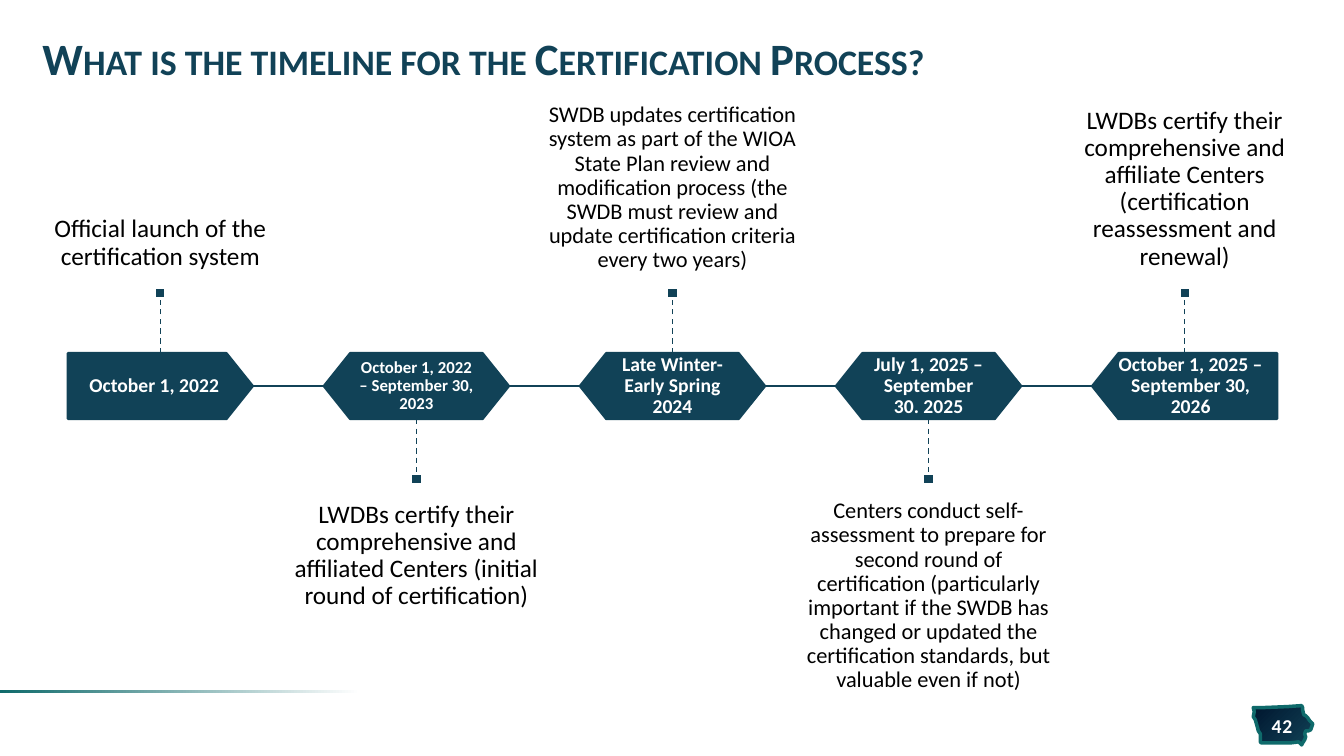
"""Build the certification process timeline slide."""
from dataclasses import dataclass

from lxml.etree import SubElement
from pptx import Presentation
from pptx.dml.color import RGBColor
from pptx.enum.dml import MSO_LINE
from pptx.enum.shapes import MSO_CONNECTOR as Connector, MSO_SHAPE as Shape
from pptx.enum.text import MSO_ANCHOR as Anchor, MSO_AUTO_SIZE as AutoSize, PP_ALIGN as Align
from pptx.oxml.ns import qn
from pptx.util import Inches, Pt

NAVY, MIDNIGHT, TEAL = "114257", "00162E", "0F6A6B"
WHITE, BLACK = "FFFFFF", "000000"
FONT = "Calibri"

PITCH = 2.54
MIDDLE_X = 6.67
AXIS_Y = 3.83
BANNER_W, BANNER_H = 1.83, 0.65
STEM = 0.54
MARKER = 0.11
NOTE_H = 1.73

STATE_OUTLINE = [
    (1291, 700), (1277, 701), (1253, 702), (1243, 702), (1244, 706), (1243, 711),
    (1245, 714), (1247, 721), (1248, 725), (1250, 728), (1250, 736), (1251, 737),
    (1280, 737), (1288, 736), (1291, 739), (1292, 737), (1294, 734), (1295, 731),
    (1294, 728), (1295, 725), (1298, 725), (1300, 724), (1302, 718), (1299, 715),
    (1297, 712), (1295, 710), (1293, 709), (1292, 704), (1292, 702),
]


@dataclass(frozen=True)
class Milestone:
    """One dated step and its explanation."""
    date: str
    note: str
    date_size: int = 14
    note_size: int = 18
    shape: Shape = Shape.HEXAGON
    rotation: int = 0
    date_shift: float = 0
    date_w: float = 1.35
    date_h: float = 0.48
    inset: float = 0.12


MILESTONES = [
    Milestone("October 1, 2022", "Official launch of the certification system",
              shape=Shape.PENTAGON, date_shift=-0.06, date_w=1.7, date_h=BANNER_H),
    Milestone("October 1, 2022 – September 30, 2023",
              "LWDBs certify their comprehensive and affiliated Centers "
              "(initial round of certification)", date_size=12, inset=0.1),
    Milestone("Late Winter-Early Spring 2024",
              "SWDB updates certification system as part of the WIOA State Plan review and "
              "modification process (the SWDB must review and update certification criteria "
              "every two years)", note_size=16),
    Milestone("July 1, 2025 – September 30. 2025",
              "Centers conduct self-assessment to prepare for second round of certification "
              "(particularly important if the SWDB has changed or updated the certification "
              "standards, but valuable even if not)", note_size=16),
    Milestone("October 1, 2025 – September 30, 2026",
              "LWDBs certify their comprehensive and affiliate Centers "
              "(certification reassessment and renewal)",
              shape=Shape.PENTAGON, rotation=180, date_shift=0.06, date_w=1.7, date_h=BANNER_H),
]


def rgb(value: str) -> RGBColor:
    """Turn a hex string into a colour."""
    return RGBColor.from_string(value)


def write_text(box, text: str, *, size: float, color: str = WHITE, bold: bool = False,
               align: Align = Align.CENTER, anchor: Anchor = Anchor.MIDDLE,
               inset_x: float = 0, inset_y: float = 0.05, line_spacing: float = 0.9,
               small_caps: bool = False, tracking: float = 0) -> None:
    """Fill a box with one formatted paragraph."""
    frame = box.text_frame
    frame.word_wrap = True
    frame.auto_size = AutoSize.NONE
    frame.vertical_anchor = anchor
    frame.margin_left = frame.margin_right = Inches(inset_x)
    frame.margin_top = frame.margin_bottom = Inches(inset_y)
    paragraph = frame.paragraphs[0]
    paragraph.alignment = align
    paragraph.line_spacing = line_spacing
    run = paragraph.add_run()
    run.text = text
    run.font.name = FONT
    run.font.size = Pt(size)
    run.font.bold = bold
    run.font.color.rgb = rgb(color)
    properties = run.font._element
    if small_caps:
        properties.set("cap", "small")
    if tracking:
        properties.set("spc", str(round(tracking * 100)))


def add_text(slide, text: str, x: float, y: float, w: float, h: float, **style) -> None:
    """Add a text box at a place in inches."""
    write_text(slide.shapes.add_textbox(Inches(x), Inches(y), Inches(w), Inches(h)), text, **style)


def add_block(slide, kind: Shape, x: float, y: float, w: float, h: float,
              fill: str = NAVY, line: str | None = None):
    """Add a flat preset shape."""
    block = slide.shapes.add_shape(kind, Inches(x), Inches(y), Inches(w), Inches(h))
    block.shadow.inherit = False
    block.fill.solid()
    block.fill.fore_color.rgb = rgb(fill)
    if line:
        block.line.color.rgb = rgb(line)
        block.line.width = Pt(2)
    else:
        block.line.fill.background()
    return block


def add_line(slide, x1: float, y1: float, x2: float, y2: float, width: float,
             dashed: bool = False) -> None:
    """Add a straight navy line without shadow."""
    line = slide.shapes.add_connector(
        Connector.STRAIGHT, Inches(x1), Inches(y1), Inches(x2), Inches(y2))
    line.line.color.rgb = rgb(NAVY)
    line.line.width = Pt(width)
    if dashed:
        line.line.dash_style = MSO_LINE.DASH
    SubElement(line._element.spPr, qn("a:effectLst"))


def fill_gradient(shape, stops: list[tuple[float, str]], angle: float) -> None:
    """Give a shape a two-colour linear gradient."""
    shape.fill.gradient()
    shape.fill.gradient_angle = angle
    for stop, (position, color) in zip(shape.fill.gradient_stops, stops):
        stop.position = position
        stop.color.rgb = rgb(color)


def add_page_mark(slide) -> None:
    """Draw the state badge, the page number and the fading rule."""
    builder = slide.shapes.build_freeform(*STATE_OUTLINE[0], scale=Inches(0.01))
    builder.add_line_segments(STATE_OUTLINE[1:], close=True)
    badge = builder.convert_to_shape()
    badge.shadow.inherit = False
    fill_gradient(badge, [(0, MIDNIGHT), (1, NAVY)], 315)
    badge.line.color.rgb = rgb(TEAL)
    badge.line.width = Pt(2.5)
    rule = add_block(slide, Shape.RECTANGLE, 0, 6.85, 3.8, 0.03)
    fill_gradient(rule, [(0.06, WHITE), (1, TEAL)], 180)
    add_text(slide, "42", 12.46, 7.08, 0.51, 0.23, size=14, bold=True,
             line_spacing=1, tracking=0.5)


def add_milestone(slide, step: Milestone, index: int) -> None:
    """Draw one banner with its date, note, stem and marker."""
    center = MIDDLE_X + PITCH * (index - len(MILESTONES) // 2)
    above = index % 2 == 0
    side = -1 if above else 1
    stem_start = AXIS_Y + side * BANNER_H / 2
    stem_end = stem_start + side * STEM
    marker_edge = stem_end + side * MARKER

    banner = add_block(slide, step.shape, center - BANNER_W / 2, AXIS_Y - BANNER_H / 2,
                       BANNER_W, BANNER_H, line=NAVY)
    banner.adjustments[0] = 0.4
    banner.rotation = step.rotation
    add_text(slide, step.date, center + step.date_shift - step.date_w / 2,
             AXIS_Y - step.date_h / 2, step.date_w, step.date_h, size=step.date_size,
             bold=True, inset_x=step.inset, inset_y=step.inset)
    add_text(slide, step.note, center - PITCH / 2, marker_edge - NOTE_H * above, PITCH, NOTE_H,
             size=step.note_size, color=BLACK, inset_y=step.note_size / 100 - 0.01,
             anchor=Anchor.BOTTOM if above else Anchor.TOP)
    if index < len(MILESTONES) - 1:
        add_line(slide, center + BANNER_W / 2, AXIS_Y, center + PITCH - BANNER_W / 2, AXIS_Y, 2)
    add_line(slide, center, stem_start, center, stem_end, 1, dashed=True)
    add_block(slide, Shape.RECTANGLE, center - MARKER / 2, min(stem_end, marker_edge),
              MARKER, MARKER, line=WHITE)


def main() -> None:
    """Build and save the slide."""
    deck = Presentation()
    deck.slide_width, deck.slide_height = Inches(13.33), Inches(7.5)
    slide = deck.slides.add_slide(deck.slide_layouts[5])
    add_page_mark(slide)
    question = slide.shapes.title
    question.left, question.top = Inches(0.32), Inches(0.24)
    question.width, question.height = Inches(12.69), Inches(0.75)
    write_text(question, "What is the timeline for the Certification Process?", size=32,
               color=NAVY, bold=True, align=Align.LEFT, inset_x=0.1, line_spacing=0.85,
               small_caps=True)
    for index, step in enumerate(MILESTONES):
        add_milestone(slide, step, index)
    deck.save("out.pptx")


if __name__ == "__main__":
    main()
